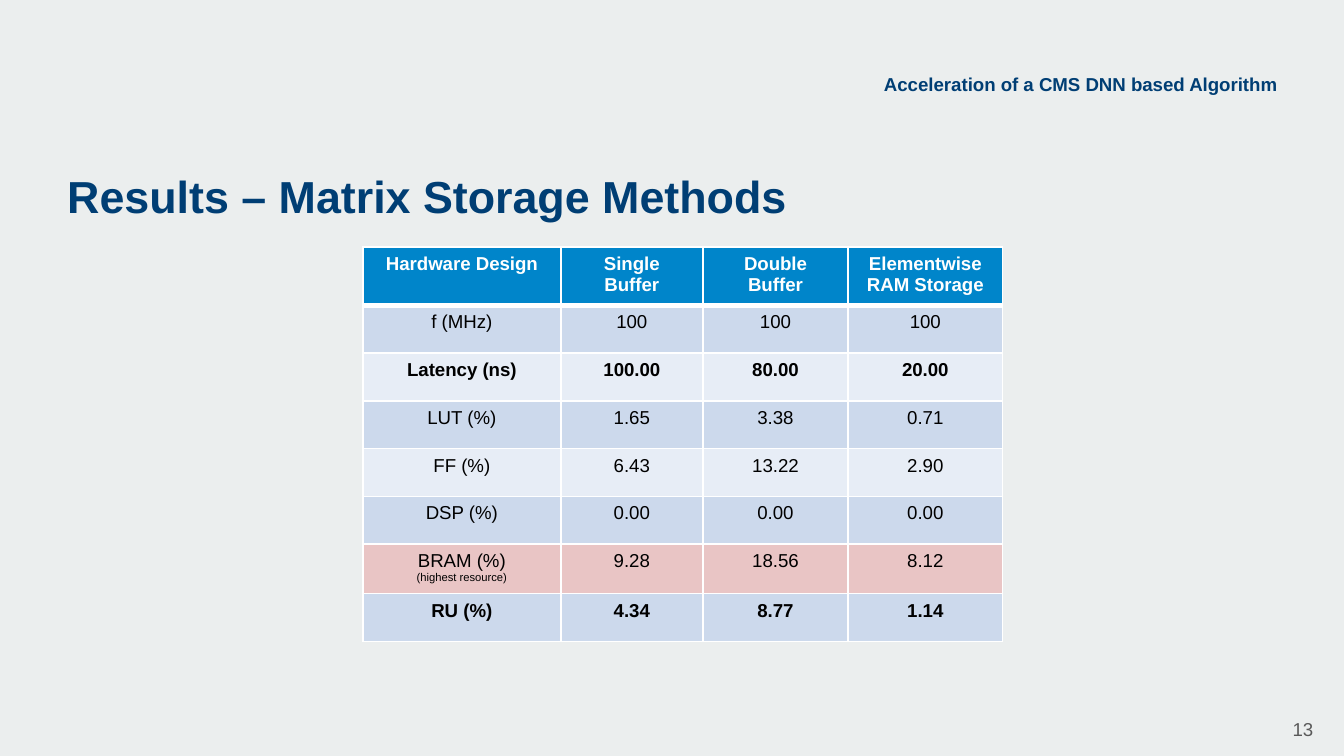
from dataclasses import dataclass

from lxml import etree
from pptx import Presentation
from pptx import util as u
from pptx.dml.color import RGBColor
from pptx.enum import text
from pptx.oxml import ns


@dataclass(frozen=True)
class Theme:
    font: str = "Arial"
    page: str = "EBEEEE"
    navy: str = "003E74"
    header: str = "0085CA"
    bands: tuple[str, str] = ("CCD9EC", "E7EDF6")
    highlight: str = "E9C5C5"
    white: str = "FFFFFF"
    black: str = "000000"
    grey: str = "595959"
    title_size: float = 24
    body_size: float = 10
    note_size: float = 6


@dataclass(frozen=True)
class Label:
    words: str
    frame: tuple[float, float, float, float]
    insets: tuple[float, float, float, float]  # left, top, right, bottom
    size: float
    color: str
    bold: bool = True
    align: text.PP_ALIGN = text.PP_ALIGN.LEFT
    anchor: text.MSO_ANCHOR = text.MSO_ANCHOR.MIDDLE


@dataclass(frozen=True)
class Row:
    values: tuple[str, ...]
    bold: bool = False
    fill: str | None = None


THEME = Theme()

LABELS = (
    Label("13", (667.4, 375.1, 43.2, 31), (7.2,) * 4, THEME.body_size,
          THEME.grey, bold=False, align=text.PP_ALIGN.RIGHT),
    Label("Results – Matrix Storage Methods", (36, 87.8, 660, 30.2),
          (0, 3.6, 0, 0), THEME.title_size, THEME.navy),
    Label("Acceleration of a CMS DNN based Algorithm", (411.8, 38.9, 272.2, 18.7),
          (0,) * 4, THEME.body_size, THEME.navy,
          align=text.PP_ALIGN.RIGHT, anchor=text.MSO_ANCHOR.TOP),
)

HEADINGS = ("Hardware Design", "Single Buffer", "Double Buffer",
            "Elementwise RAM Storage")
RESULTS = (
    Row(("f (MHz)", "100", "100", "100")),
    Row(("Latency (ns)", "100.00", "80.00", "20.00"), bold=True),
    Row(("LUT (%)", "1.65", "3.38", "0.71")),
    Row(("FF (%)", "6.43", "13.22", "2.90")),
    Row(("DSP (%)", "0.00", "0.00", "0.00")),
    Row(("BRAM (%)\n(highest resource)", "9.28", "18.56", "8.12"),
        fill=THEME.highlight),
    Row(("RU (%)", "4.34", "8.77", "1.14"), bold=True),
)
TABLE_LEFT, TABLE_TOP = 194.4, 132.3
COLUMN_WIDTHS = (106, 76.2, 77.7, 82.8)
HEADER_HEIGHT, ROW_HEIGHT = 29.6, 25.6
THIN, THICK = 1, 3


def style_runs(paragraph, size: float, color: str, bold: bool) -> None:
    for span in paragraph.runs:
        span.font.name = THEME.font
        span.font.size = u.Pt(size)
        span.font.bold = bold
        span.font.color.rgb = RGBColor.from_string(color)


def draw_label(page, label: Label) -> None:
    box = page.shapes.add_textbox(*map(u.Pt, label.frame))
    frame = box.text_frame
    frame.word_wrap = True
    frame.vertical_anchor = label.anchor
    (frame.margin_left, frame.margin_top,
     frame.margin_right, frame.margin_bottom) = map(u.Pt, label.insets)
    frame.text = label.words
    frame.paragraphs[0].alignment = label.align
    style_runs(frame.paragraphs[0], label.size, label.color, label.bold)


def add_borders(cell, top: float, bottom: float) -> None:
    properties = cell._tc.get_or_add_tcPr()
    for side, width in (("L", THIN), ("R", THIN), ("T", top), ("B", bottom)):
        line = etree.SubElement(properties, ns.qn(f"a:ln{side}"), w=str(u.Pt(width)))
        fill = etree.SubElement(line, ns.qn("a:solidFill"))
        etree.SubElement(fill, ns.qn("a:srgbClr"), val=THEME.white)


def draw_cell(cell, words: str, fill: str, color: str, bold: bool,
              top: float, bottom: float) -> None:
    add_borders(cell, top, bottom)
    cell.fill.solid()
    cell.fill.fore_color.rgb = RGBColor.from_string(fill)
    cell.text_frame.text = words
    for index, para in enumerate(cell.text_frame.paragraphs):
        para.alignment = text.PP_ALIGN.CENTER
        style_runs(para, THEME.note_size if index else THEME.body_size, color, bold)


def draw_table(page) -> None:
    height = HEADER_HEIGHT + ROW_HEIGHT * len(RESULTS)
    table = page.shapes.add_table(
        len(RESULTS) + 1, len(HEADINGS), u.Pt(TABLE_LEFT), u.Pt(TABLE_TOP),
        u.Pt(sum(COLUMN_WIDTHS)), u.Pt(height)).table
    for column, width in zip(table.columns, COLUMN_WIDTHS):
        column.width = u.Pt(width)

    # Header row, with a thick rule below
    table.rows[0].height = u.Pt(HEADER_HEIGHT)
    for column, heading in enumerate(HEADINGS):
        draw_cell(table.cell(0, column), heading, THEME.header, THEME.white,
                  True, THIN, THICK)

    # Banded result rows
    for index, row in enumerate(RESULTS):
        table.rows[index + 1].height = u.Pt(ROW_HEIGHT)
        fill = row.fill or THEME.bands[index % 2]
        top = THIN if index else THICK
        for column, value in enumerate(row.values):
            draw_cell(table.cell(index + 1, column), value, fill, THEME.black,
                      row.bold, top, THIN)


def main() -> None:
    deck = Presentation()
    deck.slide_width, deck.slide_height = u.Pt(720), u.Pt(405)
    page = deck.slides.add_slide(deck.slide_layouts[6])
    page.background.fill.solid()
    page.background.fill.fore_color.rgb = RGBColor.from_string(THEME.page)

    # Page number, title and running head
    for label in LABELS:
        draw_label(page, label)

    # Results
    draw_table(page)
    deck.save("out.pptx")


if __name__ == "__main__":
    main()
